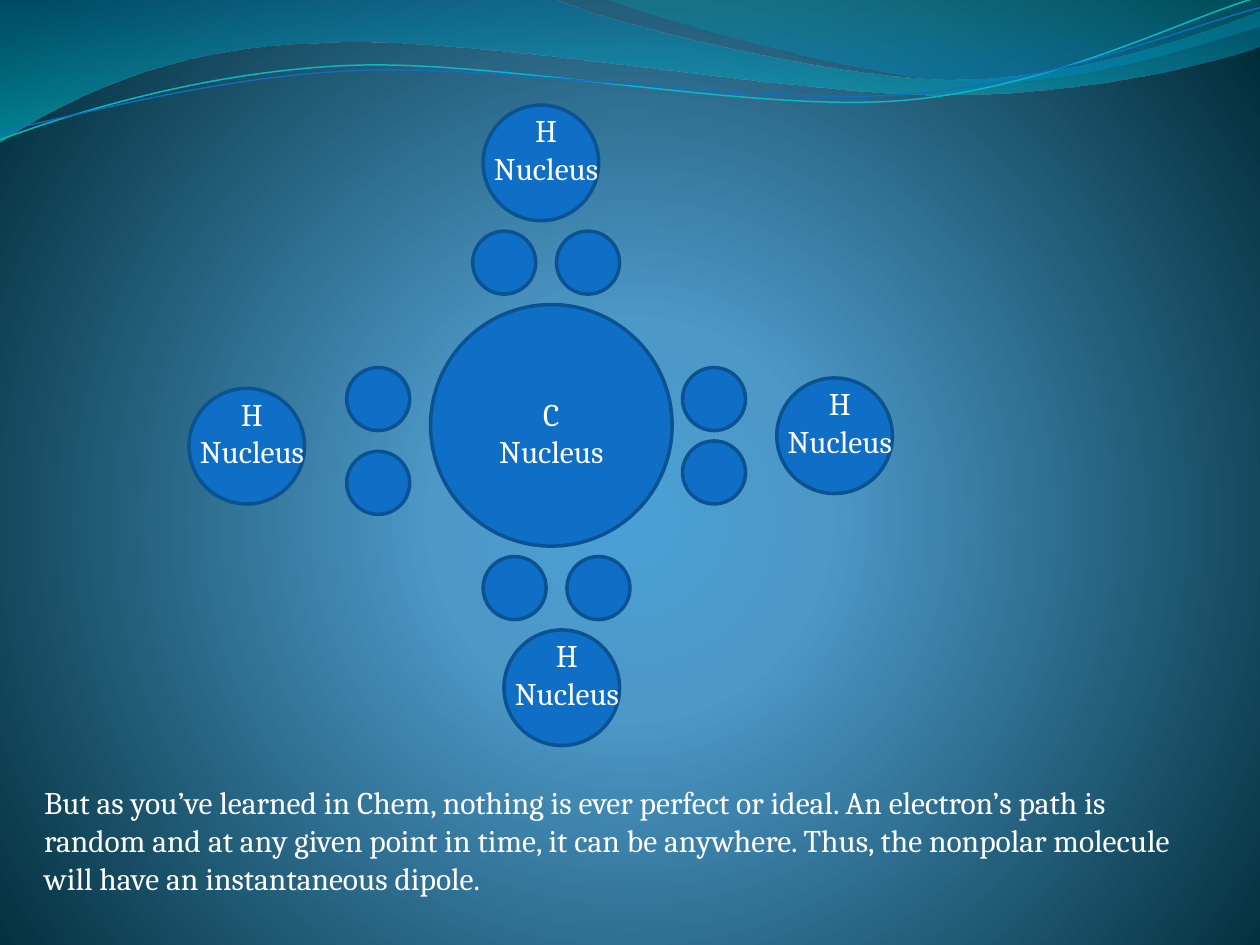
from math import cos, radians, sin
from typing import NamedTuple

from pptx import Presentation
from pptx.dml.color import RGBColor
from pptx.enum.shapes import MSO_SHAPE
from pptx.enum.text import MSO_AUTO_SIZE, PP_ALIGN
from pptx.oxml import parse_xml
from pptx.oxml.ns import nsdecls, qn
from pptx.util import Cm, Pt

BLUE = RGBColor(0x0F, 0x6F, 0xC6)
NAVY = RGBColor(0x0B, 0x52, 0x92)
TEAL = RGBColor(0x0A, 0xB8, 0xBF)
WHITE = RGBColor(0xFF, 0xFF, 0xFF)
FONT = "Cambria"
TILT = 357.3


class Stop(NamedTuple):
    pos: int
    color: RGBColor
    alpha: int = 100


class Circle(NamedTuple):
    left: float
    top: float
    size: float


class Wave(NamedTuple):
    """Box and points in inches: a pair is a line, six numbers are a curve."""
    box: tuple[float, float, float, float]
    segments: list[tuple[float, ...]]
    stops: list[Stop] | None = None
    color: RGBColor | None = None
    width: float = 0
    rotation: float = 0


BACKGROUND = [Stop(0, RGBColor(0x4A, 0xA0, 0xD6)),
              Stop(25, RGBColor(0x4C, 0x98, 0xC7)),
              Stop(100, RGBColor(0x00, 0x2C, 0x38))]

FILLED_WAVES = [
    Wave((-0.01, -0.01, 10.02, 1.14),
         [(0, 0), (4.4, -0.01), (4.76, 0.17, 6.64, 0.63, 7.58, 0.63),
          (8.53, 0.63, 9.58, 0.26, 10, 0.09), (10.01, 0.36),
          (9.83, 0.44, 8.7, 0.76, 7.46, 0.75),
          (6.22, 0.75, 3.82, 0.28, 2.57, 0.34),
          (1.29, 0.36, 0.46, 0.83, -0.01, 1.13), (0, 0)],
         stops=[Stop(0, RGBColor(0x00, 0x74, 0xA1), 45),
                Stop(100, RGBColor(0x00, 0xC6, 0xCF), 55)]),
    Wave((4.79, -0.01, 5.21, 0.7),
         [(4.79, -0.01), (5.09, 0.11, 6.82, 0.62, 7.69, 0.65),
          (8.56, 0.69, 9.61, 0.32, 10, 0.21), (10, 0), (4.79, -0.01)],
         stops=[Stop(0, RGBColor(0x00, 0xA1, 0xA9), 30),
                Stop(80, RGBColor(0x00, 0x8B, 0xBF), 45)]),
]
LINE_WAVES = [
    Wave((-0.02, 0.22, 10.02, 0.71),
         [(0, 1.11), (0.48, 0.93, 1.58, 0.57, 2.77, 0.52),
          (3.95, 0.47, 5.93, 0.89, 7.13, 0.8),
          (8.33, 0.71, 9.38, 0.15, 9.98, -0.02)],
         color=TEAL, width=0.85, rotation=TILT),
    Wave((-0.02, 0.3, 10.03, 0.58),
         [(0, 1.04), (0.47, 0.96, 1.64, 0.61, 2.83, 0.56),
          (4.03, 0.51, 5.97, 0.84, 7.17, 0.75),
          (8.36, 0.67, 9.41, 0.21, 10, 0.06)],
         color=BLUE, width=0.75, rotation=TILT),
]

CARBON = Circle(8.68, 6.14, 4.87)
ELECTRONS = [Circle(x, y, 1.27) for x, y in (
    (6.99, 7.41), (6.99, 9.1), (9.53, 4.66), (11.22, 4.66),
    (13.76, 7.41), (13.76, 8.89), (9.74, 11.22), (11.43, 11.22))]
HYDROGENS = [Circle(x, y, 2.33) for x, y in (
    (3.81, 7.83), (10.16, 12.7), (15.66, 7.62), (9.74, 2.12))]

CAPTION = ("But as you’ve learned in Chem, nothing is ever perfect or ideal. "
           "An electron’s path is random and at any given point in time, it can "
           "be anywhere. Thus, the nonpolar molecule will have an instantaneous "
           "dipole.")


def gradient_xml(stops: list[Stop], direction: str) -> str:
    gs = ""
    for st in stops:
        alpha = f'<a:alpha val="{st.alpha * 1000}"/>' if st.alpha < 100 else ""
        gs += (f'<a:gs pos="{st.pos * 1000}"><a:srgbClr val="{st.color}">'
               f'{alpha}</a:srgbClr></a:gs>')
    return (f'<a:gradFill {nsdecls("a")} rotWithShape="1">'
            f'<a:gsLst>{gs}</a:gsLst>{direction}</a:gradFill>')


def set_background(s) -> None:
    fill = gradient_xml(BACKGROUND, '<a:path path="circle"><a:fillToRect l="10000" '
                        't="110000" r="10000" b="100000"/></a:path>')
    s.element.cSld.insert(0, parse_xml(
        f'<p:bg {nsdecls("p", "a")}><p:bgPr>{fill}<a:effectLst/></p:bgPr></p:bg>'))


def outline_xml(wave: Wave) -> str:
    """Curves relative to the box, with the rotation of the shape undone."""
    left, top, width, height = wave.box
    angle = radians(-wave.rotation)

    def point(x: float, y: float) -> str:
        dx, dy = x - left - width / 2, y - top - height / 2
        px = dx * cos(angle) - dy * sin(angle) + width / 2
        py = dx * sin(angle) + dy * cos(angle) + height / 2
        return f'<a:pt x="{Cm(px * 2.54)}" y="{Cm(py * 2.54)}"/>'

    steps = ""
    for i, seg in enumerate(wave.segments):
        tag = "moveTo" if i == 0 else "lnTo" if len(seg) == 2 else "cubicBezTo"
        pts = "".join(point(x, y) for x, y in zip(seg[::2], seg[1::2]))
        steps += f"<a:{tag}>{pts}</a:{tag}>"
    if wave.stops:
        steps += "<a:close/>"
    return (f'<a:path {nsdecls("a")} w="{Cm(width * 2.54)}" '
            f'h="{Cm(height * 2.54)}">{steps}</a:path>')


def swap(old, xml: str) -> None:
    old.getparent().replace(old, parse_xml(xml))


def add_wave(shapes, wave: Wave) -> None:
    left, top, width, height = (Cm(v * 2.54) for v in wave.box)
    builder = shapes.build_freeform(left, top)
    builder.add_line_segments([(left + width, top + height)], close=False)
    sp = builder.convert_to_shape()
    swap(sp.element.spPr.find(".//" + qn("a:path")), outline_xml(wave))
    sp.rotation = wave.rotation
    sp.shadow.inherit = False
    sp.fill.background()
    if wave.stops:
        sp.line.fill.background()
        swap(sp.element.spPr.find(qn("a:noFill")),
             gradient_xml(wave.stops, '<a:lin ang="5400000" scaled="0"/>'))
    else:
        sp.line.color.rgb = wave.color
        sp.line.width = Pt(wave.width)


def add_circle(shapes, c: Circle) -> None:
    sp = shapes.add_shape(MSO_SHAPE.OVAL, Cm(c.left), Cm(c.top),
                          Cm(c.size), Cm(c.size))
    sp.shadow.inherit = False
    sp.fill.solid()
    sp.fill.fore_color.rgb = BLUE
    sp.line.color.rgb = NAVY
    sp.line.width = Pt(2)


def add_text(shapes, left: float, top: float, width: float, height: float,
             paragraphs: list[list[str]], align: PP_ALIGN | None = None) -> None:
    """Each paragraph is a list of lines."""
    tf = shapes.add_textbox(Cm(left), Cm(top), Cm(width), Cm(height)).text_frame
    tf.word_wrap = True
    tf.auto_size = MSO_AUTO_SIZE.SHAPE_TO_FIT_TEXT
    for i, lines in enumerate(paragraphs):
        p = tf.add_paragraph() if i else tf.paragraphs[0]
        p.alignment = align
        for j, line in enumerate(lines):
            if j:
                p.add_line_break()
            r = p.add_run()
            r.text = line
            r.font.name = FONT
            r.font.size = Pt(18)
            r.font.color.rgb = WHITE


def main() -> None:
    prs = Presentation()
    prs.slide_width, prs.slide_height = Cm(25.4), Cm(19.05)
    s = prs.slides.add_slide(prs.slide_layouts[6])

    # Backdrop
    set_background(s)
    for wave in FILLED_WAVES:
        add_wave(s.shapes, wave)
    lines = s.shapes.add_group_shape()
    for wave in LINE_WAVES:
        add_wave(lines.shapes, wave)

    # Carbon nucleus and electrons
    carbon = s.shapes.add_group_shape()
    add_circle(carbon.shapes, CARBON)
    add_text(carbon.shapes, 9.74, 7.83, 2.75, 1.8, [["C", "Nucleus"]],
             PP_ALIGN.CENTER)
    for electron in ELECTRONS:
        add_circle(s.shapes, electron)

    # Hydrogen nuclei
    for h in HYDROGENS:
        atom = s.shapes.add_group_shape()
        add_circle(atom.shapes, h)
        add_text(atom.shapes, h.left - 0.21, h.top, 2.96, 1.8,
                 [["H"], ["Nucleus"]], PP_ALIGN.CENTER)

    # Caption
    add_text(s.shapes, 0.64, 15.66, 23.92, 2.56, [[CAPTION]])

    prs.save("out.pptx")


if __name__ == "__main__":
    main()
